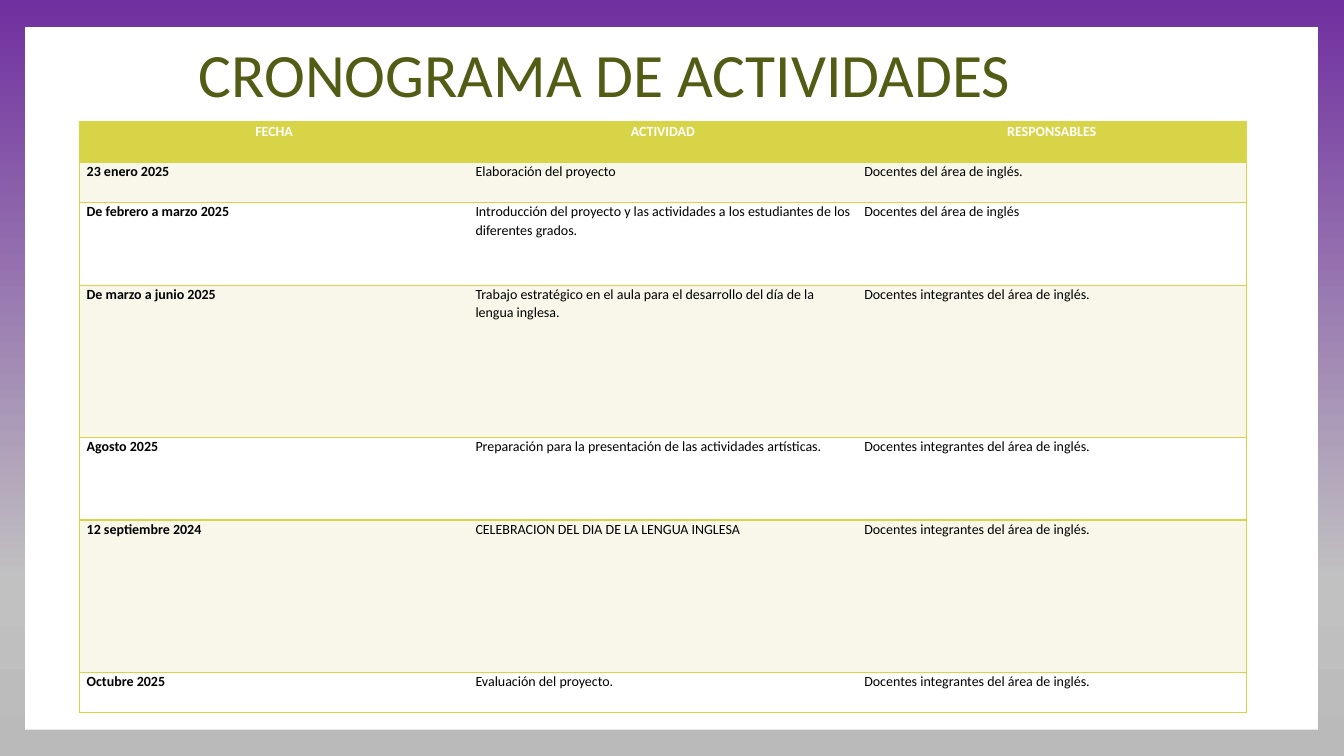
from copy import deepcopy

from lxml.etree import SubElement
from pptx import Presentation
from pptx.dml.color import RGBColor
from pptx.enum.shapes import MSO_SHAPE
from pptx.enum.text import MSO_ANCHOR, MSO_AUTO_SIZE, PP_ALIGN
from pptx.oxml.ns import qn
from pptx.util import Inches, Pt

LIME, OLIVE, CREAM = "D7D447", "535C14", "F8F7E9"
WHITE, BLACK = "FFFFFF", "000000"

BACKGROUND_STOPS = [(0, "7030A0"), (0.77, "C1C1C1"), (1, "BABABA")]
HEADINGS = ("FECHA", "ACTIVIDAD", "RESPONSABLES")
TEAM = "Docentes integrantes del área de inglés."
ACTIVITIES = [
    ("23 enero 2025", "Elaboración del proyecto", "Docentes del área de inglés."),
    ("De febrero a marzo 2025",
     "Introducción del proyecto y las actividades a los estudiantes de los diferentes grados.",
     "Docentes del área de inglés"),
    ("De marzo a junio 2025",
     "Trabajo estratégico en el aula para el desarrollo del día de la lengua inglesa.", TEAM),
    ("Agosto 2025", "Preparación para la presentación de las actividades artísticas.", TEAM),
    ("12 septiembre 2024", "CELEBRACION DEL DIA DE LA LENGUA INGLESA", TEAM),
    ("Octubre 2025", "Evaluación del proyecto.", TEAM),
]
ROW_HEIGHTS = (0.4, 0.4, 0.82, 1.51, 0.82, 1.51, 0.4)


def color(hex_value):
    return RGBColor.from_string(hex_value)


def apply(target, values):
    for name, value in values.items():
        setattr(target, name, value)


class ScheduleSlide:
    font = "Calibri"
    cell_margins = dict(margin_left=Inches(0.07), margin_right=Inches(0.07),
                        margin_top=0, margin_bottom=0)

    def __init__(self, presentation):
        self.slide = presentation.slides.add_slide(presentation.slide_layouts[5])

    def add_text(self, paragraph, text, size, hex_value, bold=False, **layout):
        run = paragraph.add_run()
        run.text = text
        apply(run.font, dict(name=self.font, size=Pt(size), bold=bold))
        run.font.color.rgb = color(hex_value)
        apply(paragraph, layout)

    def background(self, stops):
        fill = self.slide.background.fill
        fill.gradient()
        fill.gradient_angle = 270
        stop_list = self.slide.element.find(".//" + qn("a:gsLst"))
        while len(stop_list) < len(stops):
            stop_list.append(deepcopy(stop_list[-1]))
        for stop, (position, hex_value) in zip(fill.gradient_stops, stops):
            stop.position = position
            stop.color.rgb = color(hex_value)

    def panel(self, *box):
        panel = self.slide.shapes.add_shape(MSO_SHAPE.RECTANGLE, *map(Inches, box))
        panel.shadow.inherit = False
        panel.fill.solid()
        panel.fill.fore_color.rgb = color(WHITE)
        panel.line.fill.background()
        # Behind the title
        self.slide.shapes.element.insert(2, panel.element)

    def title(self, text, left, top, width, height, indent):
        title = self.slide.shapes.title
        apply(title, dict(left=Inches(left), top=Inches(top),
                          width=Inches(width), height=Inches(height)))
        apply(title.text_frame, dict(vertical_anchor=MSO_ANCHOR.MIDDLE, word_wrap=True,
                                     auto_size=MSO_AUTO_SIZE.NONE,
                                     margin_left=Inches(indent)))
        self.add_text(title.text_frame.paragraphs[0], text, 44, OLIVE,
                      alignment=PP_ALIGN.LEFT, line_spacing=0.9)

    def borders(self, cell, drawn_sides):
        properties = cell._tc.get_or_add_tcPr()
        for side in "LRTB":
            line = SubElement(properties, qn("a:ln" + side), w=str(Pt(1)))
            if side in drawn_sides:
                solid = SubElement(line, qn("a:solidFill"))
                SubElement(solid, qn("a:srgbClr"), val=LIME)
            else:
                SubElement(line, qn("a:noFill"))

    def table(self, rows, row_heights, left, top, width):
        columns = len(rows[0])
        table = self.slide.shapes.add_table(
            len(rows), columns, Inches(left), Inches(top),
            Inches(width), Inches(sum(row_heights))).table
        table.horz_banding = False
        for column in table.columns:
            column.width = Inches(width / columns)
        for r, (row, height) in enumerate(zip(rows, row_heights)):
            table.rows[r].height = Inches(height)
            heading = r == 0
            shade = LIME if heading else CREAM if r % 2 else WHITE
            for c, text in enumerate(row):
                cell = table.cell(r, c)
                apply(cell, self.cell_margins)
                self.borders(cell, "TB" + "L" * (c == 0) + "R" * (c == columns - 1))
                cell.fill.solid()
                cell.fill.fore_color.rgb = color(shade)
                self.add_text(cell.text_frame.paragraphs[0], text, 10,
                              WHITE if heading else BLACK, bold=heading or c == 0,
                              alignment=PP_ALIGN.CENTER if heading else PP_ALIGN.LEFT,
                              line_spacing=1.07, space_after=Pt(8))


def main():
    presentation = Presentation()
    apply(presentation, dict(slide_width=Inches(13.33), slide_height=Inches(7.5)))
    schedule = ScheduleSlide(presentation)

    # Backdrop
    schedule.background(BACKGROUND_STOPS)
    schedule.panel(0.25, 0.27, 12.82, 6.97)

    # Title
    schedule.title("CRONOGRAMA DE ACTIVIDADES", 1.08, 0.02, 11, 1.5, indent=0.89)

    # Activity schedule
    schedule.table([HEADINGS, *ACTIVITIES], ROW_HEIGHTS, 0.79, 1.21, 11.57)

    presentation.save("out.pptx")


if __name__ == "__main__":
    main()
